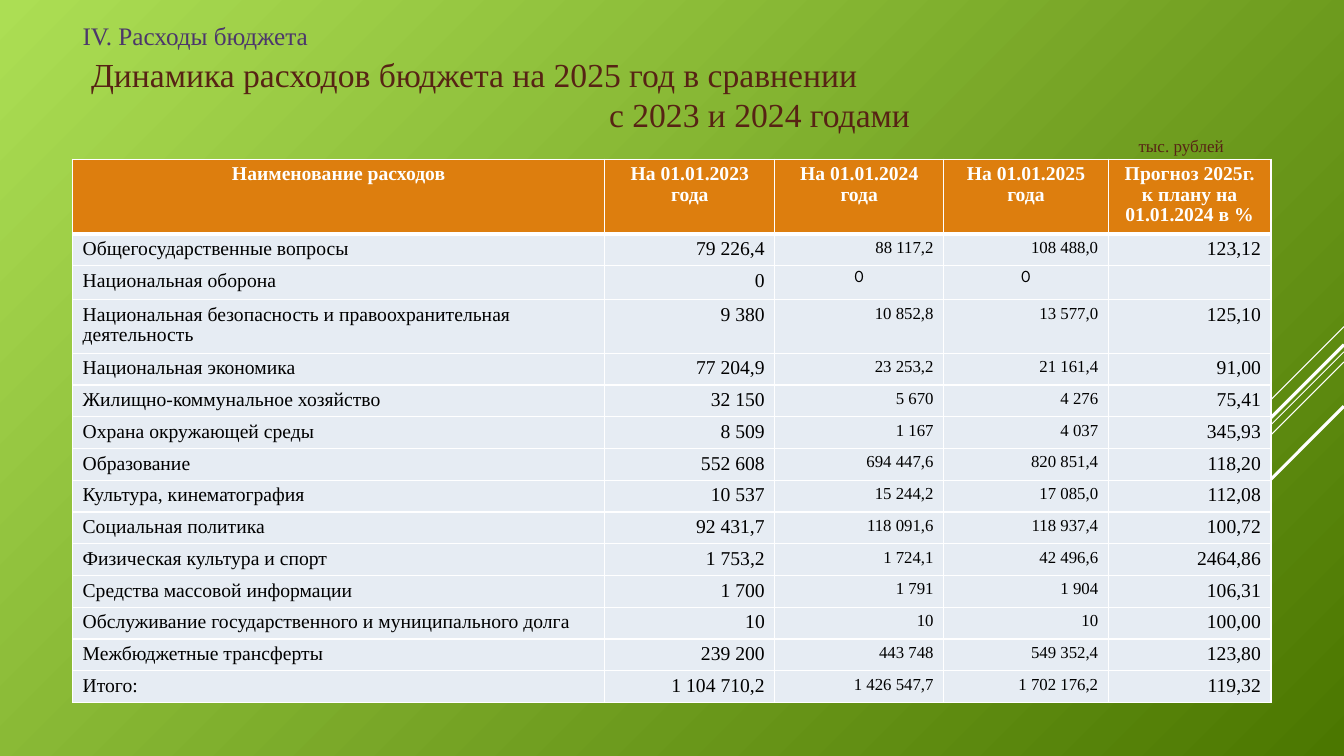
from lxml.etree import SubElement
from pptx import Presentation
from pptx.dml.color import RGBColor
from pptx.enum.shapes import MSO_CONNECTOR
from pptx.enum.text import MSO_ANCHOR, MSO_AUTO_SIZE, PP_ALIGN
from pptx.oxml.ns import qn
from pptx.util import Pt

WHITE = RGBColor(0xFF, 0xFF, 0xFF)
BLACK = RGBColor(0, 0, 0)
LIME = RGBColor(0xAC, 0xDE, 0x54)
FOREST = RGBColor(0x4B, 0x77, 0x00)
PURPLE = RGBColor(0x4C, 0x37, 0x6B)
BROWN = RGBColor(0x57, 0x23, 0x14)
ORANGE = RGBColor(0xDD, 0x7E, 0x0E)
PALE_BLUE = RGBColor(0xE6, 0xEC, 0xF3)

SERIF = "Times New Roman"
SANS = "League Spartan"
LEFT, CENTER, RIGHT = PP_ALIGN.LEFT, PP_ALIGN.CENTER, PP_ALIGN.RIGHT

SLIDE_WIDTH, SLIDE_HEIGHT = 960, 540
MARGIN, CONTENT_WIDTH = 51.84, 856.08
THIN, THICK = 0.96, 3
HEADER_HEIGHT, LINE_HEIGHT, CELL_PADDING = 53.5, 15.5, 7.2

# start height at the right edge, horizontal run, line width
DIAGONALS = [
    (233.3, 72, 0.75),
    (251.3, 234.7, 0.75),
    (258.5, 149, 0.75),
    (246.2, 137.5, 2.25),
    (290.2, 100, 2.25),
]

COLUMN_WIDTHS = [380.16, 121.5, 120.6, 117.6, 116.22]
COLUMN_SIZES = [14, 14, 12, 12, 14]
HEADERS = ["Наименование расходов", "На 01.01.2023 года", "На 01.01.2024 года",
           "На 01.01.2025 года", "Прогноз 2025г. к плану на 01.01.2024 в %"]
DEFENCE = "Национальная оборона"
SECURITY = "Национальная безопасность и правоохранительная деятельность"
EXPENSES = [
    ["Общегосударственные вопросы", "79 226,4", "88 117,2", "108 488,0", "123,12"],
    [DEFENCE, "0", "0", "0", ""],
    [SECURITY, "9 380", "10 852,8", "13 577,0", "125,10"],
    ["Национальная экономика", "77 204,9", "23 253,2", "21 161,4", "91,00"],
    ["Жилищно-коммунальное хозяйство", "32 150", "5 670", "4 276", "75,41"],
    ["Охрана окружающей среды", "8 509", "1 167", "4 037", "345,93"],
    ["Образование", "552 608", "694 447,6", "820 851,4", "118,20"],
    ["Культура, кинематография", "10 537", "15 244,2", "17 085,0", "112,08"],
    ["Социальная политика", "92 431,7", "118 091,6", "118 937,4", "100,72"],
    ["Физическая культура и спорт", "1 753,2", "1 724,1", "42 496,6", "2464,86"],
    ["Средства массовой информации", "1 700", "1 791", "1 904", "106,31"],
    ["Обслуживание государственного и муниципального долга", "10", "10", "10", "100,00"],
    ["Межбюджетные трансферты", "239 200", "443 748", "549 352,4", "123,80"],
    ["Итого:", "1 104 710,2", "1 426 547,7", "1 702 176,2", "119,32"],
]


class BudgetSlide:
    def __init__(self, presentation):
        self.slide = presentation.slides.add_slide(presentation.slide_layouts[5])

    def background(self, start, end):
        fill = self.slide.background.fill
        fill.gradient()
        fill.gradient_angle = 315
        for stop, color, position in zip(fill.gradient_stops, (start, end), (0, 1)):
            stop.color.rgb = color
            stop.position = position

    def diagonal(self, top, run, width):
        """Draw a 45-degree line down and left from the right edge."""
        line = self.slide.shapes.add_connector(
            MSO_CONNECTOR.STRAIGHT, Pt(SLIDE_WIDTH), Pt(top),
            Pt(SLIDE_WIDTH - run), Pt(top + run))
        line.line.color.rgb = WHITE
        line.line.width = Pt(width)
        SubElement(line._element.spPr, qn("a:effectLst"))

    def add_text(self, paragraph, text, size, color, align=LEFT, bold=False, font=SERIF):
        paragraph.alignment = align
        run = paragraph.add_run()
        run.text = text
        run.font.size = Pt(size)
        run.font.name = font
        run.font.bold = bold
        run.font.color.rgb = color

    def prepare_frame(self, shape, left, top, width, height):
        shape.left, shape.top = Pt(left), Pt(top)
        shape.width, shape.height = Pt(width), Pt(height)
        frame = shape.text_frame
        frame.word_wrap = True
        frame.auto_size = MSO_AUTO_SIZE.NONE
        frame.vertical_anchor = MSO_ANCHOR.MIDDLE
        return frame

    def title(self, lines, left, top, width, height):
        """Fill the title with (text, indent) lines."""
        frame = self.prepare_frame(self.slide.shapes.title, left, top, width, height)
        for index, (text, indent) in enumerate(lines):
            paragraph = frame.add_paragraph() if index else frame.paragraphs[0]
            self.add_text(paragraph, text, 24, BROWN)
            properties = paragraph._p.get_or_add_pPr()
            properties.set("marL", str(Pt(indent)))
            properties.set("indent", "0")

    def label(self, text, box, size, color, align=LEFT):
        shape = self.slide.shapes.add_textbox(*map(Pt, box))
        frame = self.prepare_frame(shape, *box)
        self.add_text(frame.paragraphs[0], text, size, color, align)

    def border(self, cell, side, width):
        line = SubElement(cell._tc.get_or_add_tcPr(), qn(f"a:ln{side}"), w=str(Pt(width)))
        fill = SubElement(line, qn("a:solidFill"))
        SubElement(fill, qn("a:srgbClr"), val=str(WHITE))

    def cell(self, cell, text, fill, widths, size, **style):
        for side, width in zip("LRTB", widths):
            self.border(cell, side, width)
        cell.fill.solid()
        cell.fill.fore_color.rgb = fill
        paragraph = cell.text_frame.paragraphs[0]
        paragraph.line_spacing = 0.95
        if text:
            self.add_text(paragraph, text, size, **style)
        else:
            SubElement(paragraph._p, qn("a:endParaRPr"), sz=str(size * 100))

    def table(self, left, top):
        heights = [HEADER_HEIGHT] + [
            CELL_PADDING + LINE_HEIGHT * (2 if row[0] == SECURITY else 1) for row in EXPENSES]
        table = self.slide.shapes.add_table(
            len(heights), len(HEADERS), Pt(left), Pt(top),
            Pt(CONTENT_WIDTH), Pt(sum(heights))).table
        table.horz_banding = False
        for column, width in zip(table.columns, COLUMN_WIDTHS):
            column.width = Pt(width)
        for row, height in zip(table.rows, heights):
            row.height = Pt(height)
        for column, text in enumerate(HEADERS):
            self.cell(table.cell(0, column), text, ORANGE, (THIN, THIN, THIN, THICK), 14,
                      color=WHITE, align=CENTER, bold=True)
        for row, values in enumerate(EXPENSES, 1):
            widths = (THIN, THIN, THICK if row == 1 else THIN, THIN)
            for column, text in enumerate(values):
                centered = values[0] == DEFENCE and column in (2, 3)
                align = CENTER if centered else RIGHT if column else LEFT
                self.cell(table.cell(row, column), text, PALE_BLUE, widths,
                          COLUMN_SIZES[column], color=BLACK, align=align,
                          font=SANS if centered else SERIF)


def main():
    presentation = Presentation()
    presentation.slide_width, presentation.slide_height = Pt(SLIDE_WIDTH), Pt(SLIDE_HEIGHT)
    budget = BudgetSlide(presentation)
    budget.background(LIME, FOREST)
    for diagonal in DIAGONALS:
        budget.diagonal(*diagonal)
    budget.label("IV. Расходы бюджета", (MARGIN, 13.7, CONTENT_WIDTH, 23), 18, PURPLE)
    budget.title([("Динамика расходов бюджета на 2025 год в сравнении", 6),
                  ("с 2023 и 2024 годами", 376)],
                 MARGIN, 37.4, CONTENT_WIDTH, 60)
    budget.label("тыс. рублей", (779, 94.3, 129.6, 19.4), 12.2, BROWN, CENTER)
    budget.table(MARGIN, 113.76)
    presentation.save("out.pptx")


if __name__ == "__main__":
    main()
